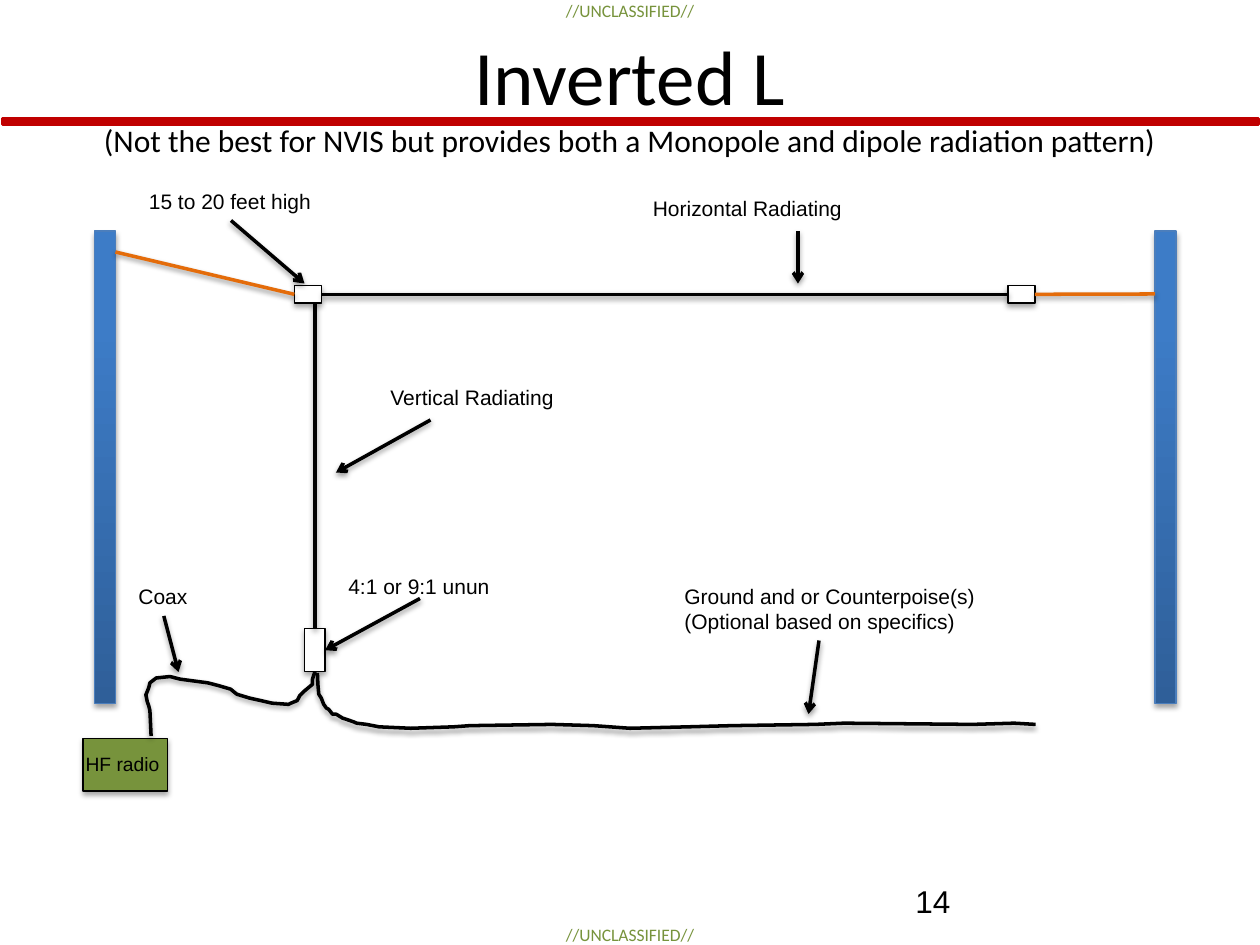
from dataclasses import dataclass

from lxml import etree
from pptx import Presentation
from pptx import util as u
from pptx.dml.color import RGBColor
from pptx.enum import shapes, text
from pptx.oxml.ns import qn


@dataclass(frozen=True)
class Theme:
    heading_font: str = "Calibri"
    label_font: str = "Arial"
    black: str = "000000"
    white: str = "FFFFFF"
    red: str = "C00000"
    green: str = "77933C"
    orange: str = "E46C0A"
    pole_dark: str = "2F5F99"
    pole_light: str = "3D7CC7"
    pole_edge: str = "4B7EBC"
    title_size: float = 44
    subtitle_size: float = 18
    number_size: float = 18
    label_size: float = 12
    radio_size: float = 11
    marking_size: float = 10
    thin: float = 0.75
    bar_line: float = 1.5
    wire: float = 2


COAX = [
    (180, 383.8), (178.6, 388.1), (178.6, 391), (173.5, 395.3), (171.4, 397.4),
    (169.9, 400.3), (166.3, 401.8), (164.9, 402.5), (155.5, 401.8), (149, 400.3),
    (142.6, 398.9), (135.4, 396.7), (131.8, 393.8), (124.6, 391.7), (118.8, 390.2),
    (103, 388.1), (97.2, 386.6), (89.3, 387.4), (85.7, 390.2), (85, 393.1),
    (83.4, 397), (84.2, 401), (85, 403.2), (85.7, 406.1), (86.4, 420.5),
]
COUNTERPOISE = [
    (181.4, 384.5), (181.7, 391), (182.2, 396.7), (183.6, 398.9), (185, 402.5),
    (186.5, 404.6), (187.9, 405.4), (190.1, 408.2), (192.2, 408.2), (195.8, 410.4),
    (198, 411.1), (202.3, 412.6), (203.8, 413.3), (209.5, 414), (216.7, 415.4),
    (234.7, 416.2), (259.2, 415.4), (268.6, 414.7), (315.4, 414), (339.1, 414.7),
    (360, 416.2), (393.1, 415.4), (418.3, 414.7), (465.8, 414), (482.4, 413.3),
    (555.8, 414), (579.6, 413.3), (591.8, 414),
]
LABELS = [
    (78, 104.4, 108, ["15 to 20 feet high"]),
    (366, 108, 127.4, ["Horizontal Radiating"]),
    (216, 216, 110.2, ["Vertical Radiating"]),
    (192, 324, 95.8, ["4:1 or 9:1 unun"]),
    (72, 329.8, 42.5, ["Coax"]),
    (384, 329.8, 182.2, ["Ground and or Counterpoise(s)", "(Optional based on specifics)"]),
]
POINTERS = [
    ((132, 126), (174, 162)),
    ((456, 132), (456, 162)),
    ((246, 240), (192, 270)),
    ((93.6, 352), (102, 384)),
    ((468, 366), (462, 408)),
]
TOP, LEFT, BOTTOM, RIGHT = range(4)


class Sketch:
    def __init__(self, page, theme):
        self.page = page
        self.theme = theme

    def span(self, para, words, size, font, color):
        span = para.add_run()
        span.text = words
        span.font.size = u.Pt(size)
        span.font.name = font
        span.font.color.rgb = RGBColor.from_string(color)

    def title(self, heading, subtitle):
        theme = self.theme
        box = self.page.shapes.title
        box.left, box.top, box.width, box.height = map(u.Pt, (36, 12, 648, 99.4))
        frame = box.text_frame
        frame.word_wrap = True
        frame.auto_size = text.MSO_AUTO_SIZE.NONE
        frame.vertical_anchor = text.MSO_ANCHOR.TOP
        frame.margin_top = u.Pt(4.5)
        para = frame.paragraphs[0]
        para.alignment = text.PP_ALIGN.CENTER
        self.span(para, heading, theme.title_size, theme.heading_font, theme.black)
        para.add_line_break()
        self.span(para, subtitle, theme.subtitle_size, theme.heading_font, theme.black)

    def label(self, frame, lines, size, font=None, color=None, wrap=False,
              align=text.PP_ALIGN.LEFT):
        box = self.page.shapes.add_textbox(*map(u.Pt, frame))
        body = box.text_frame
        body.word_wrap = wrap
        body.auto_size = text.MSO_AUTO_SIZE.SHAPE_TO_FIT_TEXT
        for index, words in enumerate(lines):
            para = body.add_paragraph() if index else body.paragraphs[0]
            para.alignment = align
            self.span(para, words, size, font or self.theme.label_font,
                      color or self.theme.black)

    def outline(self, shape, color, width):
        shape.line.color.rgb = RGBColor.from_string(color)
        shape.line.width = u.Pt(width)

    def shadow(self, shape, distance, opacity):
        effects = etree.SubElement(shape.element.spPr, qn("a:effectLst"))
        outer = etree.SubElement(
            effects, qn("a:outerShdw"), blurRad=str(u.Pt(3.1)),
            dist=str(u.Pt(distance)), dir="5400000", rotWithShape="0")
        color = etree.SubElement(outer, qn("a:srgbClr"), val=self.theme.black)
        etree.SubElement(color, qn("a:alpha"), val=str(opacity * 1000))

    def block(self, frame, fill, edge=None, width=None, shadowed=True,
              kind=shapes.MSO_SHAPE.RECTANGLE):
        box = self.page.shapes.add_shape(kind, *map(u.Pt, frame))
        box.shadow.inherit = not shadowed
        if shadowed:
            box.element.spPr.remove(box.element.spPr.find(qn("a:effectLst")))
        else:
            box.shadow.inherit = False
        box.fill.solid()
        box.fill.fore_color.rgb = RGBColor.from_string(fill)
        self.outline(box, edge or self.theme.black, width or self.theme.thin)
        if shadowed:
            self.shadow(box, 1.8, 35)
        return box

    def pole(self, left):
        theme = self.theme
        pole = self.block((left, 132, 12, 270), theme.pole_light, theme.pole_edge,
                          kind=shapes.MSO_SHAPE.FLOWCHART_PROCESS)
        pole.fill.gradient()
        pole.fill.gradient_angle = 90
        colors = (theme.pole_dark, theme.pole_light)
        for stop, position, color in zip(pole.fill.gradient_stops, (0, 0.8), colors):
            stop.position = position
            stop.color.rgb = RGBColor.from_string(color)

    def line(self, start, end, color=None, arrow=False, begin_at=None, end_at=None):
        points = map(u.Pt, (*start, *end))
        line = self.page.shapes.add_connector(shapes.MSO_CONNECTOR.STRAIGHT, *points)
        if begin_at:
            line.begin_connect(*begin_at)
        if end_at:
            line.end_connect(*end_at)
        self.outline(line, color or self.theme.black, self.theme.wire)
        if arrow:
            etree.SubElement(line.line._get_or_add_ln(), qn("a:tailEnd"), type="arrow")
        self.shadow(line, 1.6, 38)

    def cable(self, points):
        first, *rest = [(u.Pt(x), u.Pt(y)) for x, y in points]
        builder = self.page.shapes.build_freeform(*first)
        builder.add_line_segments(rest, close=False)
        cable = builder.convert_to_shape()
        cable.fill.background()
        self.outline(cable, self.theme.black, self.theme.wire)
        self.shadow(cable, 1.6, 38)


def main():
    deck = Presentation()
    deck.slide_width, deck.slide_height = u.Pt(720), u.Pt(540)
    theme = Theme()
    sketch = Sketch(deck.slides.add_slide(deck.slide_layouts[5]), theme)

    sketch.block((1.4, 67.7, 717.8, 3.6), theme.red, theme.red, theme.bar_line, False)
    for top in (-3.6, 524.2):
        sketch.label((308.9, top, 102.2, 19.4), ["//UNCLASSIFIED//"], theme.marking_size,
                     theme.heading_font, theme.green, align=text.PP_ALIGN.CENTER)
    sketch.title("Inverted L", "(Not the best for NVIS but provides both a Monopole "
                 "and dipole radiation pattern)")
    sketch.label((516, 500.4, 168, 28.8), ["14"], theme.number_size, wrap=True)

    sketch.block((47.5, 421.9, 48.2, 30.2), theme.green)
    sketch.label((41.8, 426.2, 59.8, 20.9), ["HF radio"], theme.radio_size)
    corner = sketch.block((168.2, 163.2, 15.4, 10), theme.white)
    insulator = sketch.block((576, 163.2, 15.4, 10), theme.white)
    unun = sketch.block((174.2, 359.3, 11.6, 24.5), theme.white)
    for left in (54, 660):
        sketch.pole(left)

    sketch.line((183.6, 168.2), (576, 168.2), begin_at=(corner, RIGHT),
                end_at=(insulator, LEFT))
    sketch.line((180, 173.2), (180, 359.3), end_at=(unun, TOP))
    sketch.line((660, 168), (591.4, 168), theme.orange, end_at=(insulator, RIGHT))
    sketch.line((168.2, 168.2), (66, 144), theme.orange, begin_at=(corner, LEFT))
    sketch.line((240, 342), (185.8, 371.6), arrow=True, end_at=(unun, RIGHT))
    for start, end in POINTERS:
        sketch.line(start, end, arrow=True)
    for points in (COAX, COUNTERPOISE):
        sketch.cable(points)
    for left, top, width, lines in LABELS:
        height = 7.2 + 14.4 * len(lines)
        sketch.label((left, top, width, height), lines, theme.label_size)

    deck.save("out.pptx")


if __name__ == "__main__":
    main()
